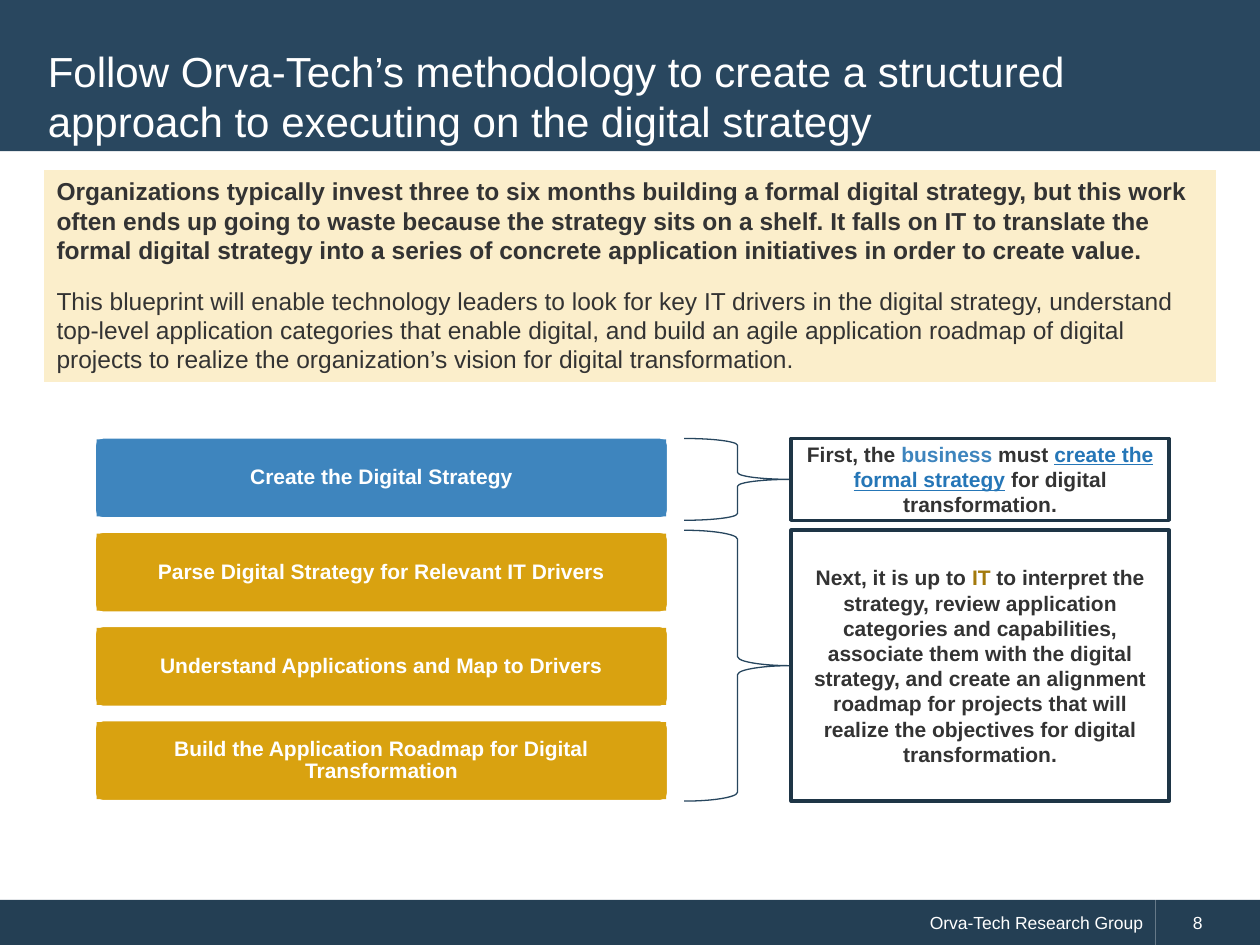
from pptx import Presentation
from pptx.dml.color import RGBColor
from pptx.enum.shapes import MSO_SHAPE
from pptx.enum.text import MSO_ANCHOR, MSO_AUTO_SIZE, PP_ALIGN
from pptx.util import Cm, Pt

COLORS = {
    "white": "FFFFFF", "text": "333333", "header": "29475F", "footer": "243F54",
    "cream": "FBEECB", "blue": "3E85BE", "gold": "D9A210", "dark gold": "A37A0C",
    "link": "2576B7", "brace": "27465E", "frame": "1E3546",
}


def add_block(kind, left, top, width, height, fill=None, line=None, line_width=2):
    block = page.shapes.add_shape(kind, Cm(left), Cm(top), Cm(width), Cm(height))
    block.shadow.inherit = False
    if fill:
        block.fill.solid()
        block.fill.fore_color.rgb = RGBColor.from_string(COLORS[fill])
    else:
        block.fill.background()
    if line:
        block.line.color.rgb = RGBColor.from_string(COLORS[line])
        block.line.width = Pt(line_width)
    else:
        block.line.fill.background()
    return block


def write(shape, paragraphs, size, align=PP_ALIGN.LEFT, anchor=MSO_ANCHOR.MIDDLE, **spacing):
    """Fill a shape with paragraphs, each a list of (text, color, font settings)."""
    frame = shape.text_frame
    frame.word_wrap = True
    frame.auto_size = MSO_AUTO_SIZE.NONE
    frame.vertical_anchor = anchor
    for index, spans in enumerate(paragraphs):
        para = frame.add_paragraph() if index else frame.paragraphs[0]
        para.alignment = align
        for name, value in spacing.items():
            setattr(para, name, value)
        for text, color, settings in spans:
            span = para.add_run()
            span.text = text
            span.font.color.rgb = RGBColor.from_string(COLORS[color])
            for name, value in {"name": "Arial", "size": Pt(size), **settings}.items():
                setattr(span.font, name, value)
    return frame


deck = Presentation()
deck.slide_width, deck.slide_height = Cm(25.4), Cm(19.05)
page = deck.slides.add_slide(deck.slide_layouts[5])
BOLD = {"bold": True}

# Footer and header bands
footer = add_block(MSO_SHAPE.RECTANGLE, 0, 18.14, 23.29, 0.91, "footer")
write(footer, [[("Orva-Tech Research Group", "white", {})]], 10, PP_ALIGN.RIGHT)
number = add_block(MSO_SHAPE.RECTANGLE, 23.29, 18.14, 2.11, 0.91, "footer")
write(number, [[("8", "white", {})]], 10).margin_left = Cm(0.76)
add_block(MSO_SHAPE.RECTANGLE, 0, 0, 25.4, 3.05, "header")

# Title, brought in front of the header band
title = page.shapes.title
title.element.getparent().append(title.element)
title.left, title.top, title.width, title.height = Cm(0.71), Cm(0.71), Cm(23.95), Cm(2.44)
write(title, [[(
    "Follow Orva-Tech’s methodology to create a structured approach to executing "
    "on the digital strategy", "white", {})]], 24)

# Introduction
introduction = add_block(MSO_SHAPE.RECTANGLE, 0.89, 3.43, 23.62, 4.27, "cream")
write(introduction, [
    [("Organizations typically invest three to six months building a formal digital strategy, "
      "but this work often ends up going to waste because the strategy sits on a shelf. It falls "
      "on IT to translate the formal digital strategy into a series of concrete application "
      "initiatives in order to create value.", "text", BOLD)],
    [("This blueprint will enable technology leaders to look for key IT drivers in the digital "
      "strategy, understand top-level application categories that enable digital, and build an "
      "agile application roadmap of digital projects to realize the organization’s vision for "
      "digital transformation.", "text", {})],
], 14, anchor=MSO_ANCHOR.TOP, space_before=Pt(6), space_after=Pt(6))

# Braces with the explanation of each phase
phases = [
    (8.84, 1.65, [
        ("First, the ", "text", BOLD),
        ("business", "blue", BOLD),
        (" must ", "text", BOLD),
        ("create the formal strategy", "link", {"bold": True, "underline": True}),
        (" for digital transformation.", "text", BOLD),
    ]),
    (10.69, 5.46, [
        ("Next, it is up to ", "text", BOLD),
        ("IT", "dark gold", BOLD),
        (" to interpret the strategy, review application categories and capabilities, associate "
         "them with the digital strategy, and create an alignment roadmap for projects that will "
         "realize the objectives for digital transformation.", "text", BOLD),
    ]),
]
for top, height, spans in phases:
    add_block(MSO_SHAPE.RIGHT_BRACE, 13.79, top, 2.16, height, line="brace", line_width=0.75)
    box = add_block(MSO_SHAPE.RECTANGLE, 15.95, top, 7.62, height, line="frame")
    write(box, [spans], 12, PP_ALIGN.CENTER)

# Steps: a rounded panel under a square label
steps = [
    ("Create the Digital Strategy", "blue"),
    ("Parse Digital Strategy for Relevant IT Drivers", "gold"),
    ("Understand Applications and Map to Drivers", "gold"),
    ("Build the Application Roadmap for Digital Transformation", "gold"),
]
for index, (text, color) in enumerate(steps):
    top = 8.81 + 1.9 * index
    panel = add_block(MSO_SHAPE.ROUNDED_RECTANGLE, 1.9, top, 11.58, 1.65, color, "white")
    panel.adjustments[0] = 0.1
    label = add_block(MSO_SHAPE.RECTANGLE, 1.95, top + 0.05, 11.48, 1.55, color)
    frame = write(label, [[(text, "white", BOLD)]], 12, PP_ALIGN.CENTER,
                  line_spacing=0.9, space_after=Pt(4.2))
    frame.margin_left = frame.margin_right = Cm(0.08)
    frame.margin_top = frame.margin_bottom = Cm(0.05)

deck.save("out.pptx")
